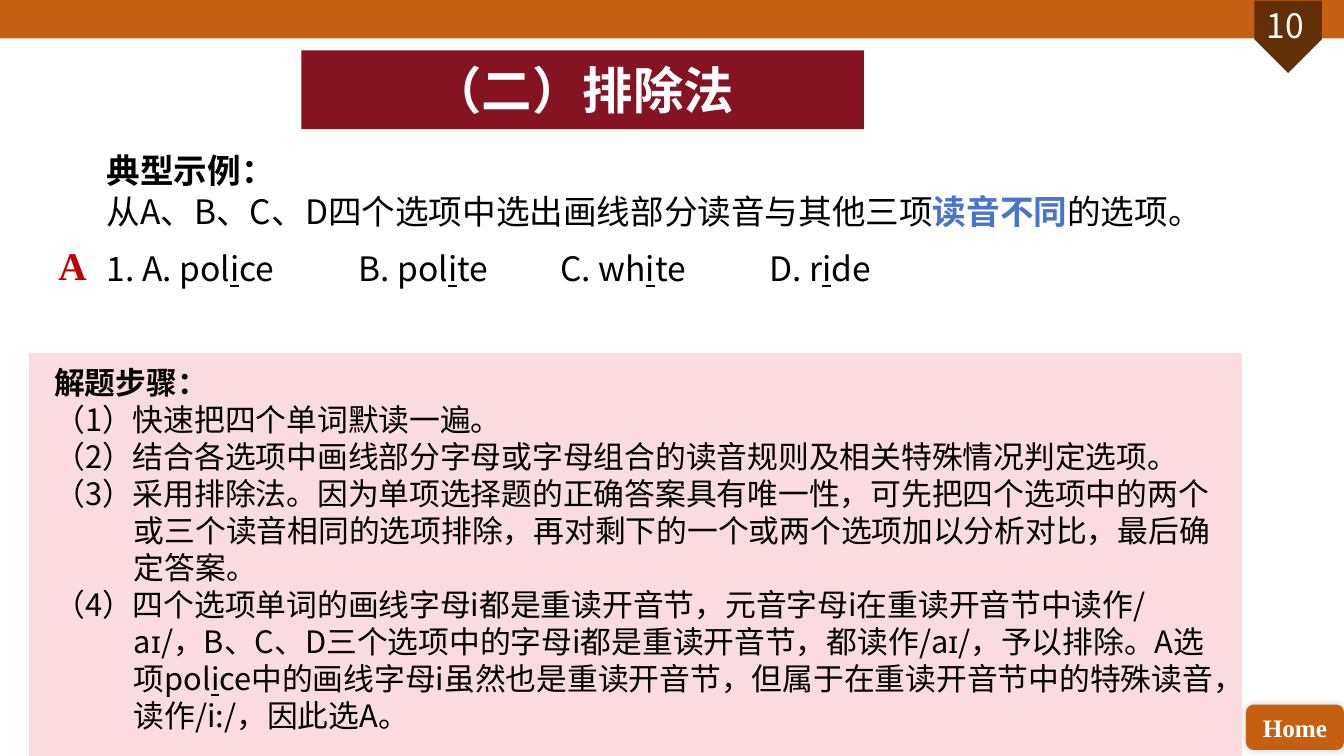
from dataclasses import dataclass

from lxml.etree import SubElement
from pptx import Presentation
from pptx.dml.color import RGBColor
from pptx.enum.shapes import MSO_SHAPE
from pptx.enum.text import MSO_ANCHOR, MSO_AUTO_SIZE, PP_ALIGN
from pptx.oxml.ns import qn
from pptx.util import Pt

ORANGE = RGBColor(0xC6, 0x5F, 0x10)
BROWN = RGBColor(0x63, 0x2F, 0x08)
MAROON = RGBColor(0x85, 0x13, 0x21)
PINK = RGBColor(0xFA, 0xDB, 0xDF)
BLUE = RGBColor(0x48, 0x74, 0xCB)
RED = RGBColor(0xC0, 0x00, 0x00)
BLACK = RGBColor(0, 0, 0)
WHITE = RGBColor(0xFF, 0xFF, 0xFF)
SANS = "Noto Sans CJK SC"
SERIF = "Times New Roman"


@dataclass(frozen=True)
class Box:
    left: float
    top: float
    width: float
    height: float


@dataclass(frozen=True)
class Panel:
    kind: MSO_SHAPE
    box: Box
    fill: RGBColor
    rotation: float = 0


@dataclass(frozen=True)
class Span:
    text: str
    bold: bool = False
    underline: bool = False
    color: RGBColor = BLACK


@dataclass(frozen=True)
class Para:
    spans: tuple
    space_after: float = 0


BAND = Panel(MSO_SHAPE.RECTANGLE, Box(0, 0, 960, 27.4), ORANGE)
PAGE_FLAG = Panel(MSO_SHAPE.PENTAGON, Box(894.2, 2.2, 51.8, 48.2), BROWN, 90)
HOME_BUTTON = Panel(MSO_SHAPE.ROUNDED_RECTANGLE, Box(890, 503.3, 70, 32.4), ORANGE)
STEPS_PANEL = Panel(MSO_SHAPE.RECTANGLE, Box(20.9, 252, 866.2, 288), PINK)
TITLE_BOX = Box(215.3, 36, 401.8, 56.2)

LETTER_I = Span("i", underline=True)
EXAMPLE = (
    Para((Span("典型示例：", bold=True),)),
    Para((
        Span("从A、B、C、D四个选项中选出画线部分读音与其他三项"),
        Span("读音不同", bold=True, color=BLUE),
        Span("的选项。"),
    ), space_after=12),
    Para((
        Span("1. A. pol"), LETTER_I, Span("ce \t\tB. pol"), LETTER_I,
        Span("te \t\tC. wh"), LETTER_I, Span("te\t\t D. r"), LETTER_I, Span("de"),
    )),
)
STEPS = (
    Para((Span("解题步骤：", bold=True),)),
    Para((Span("（1）快速把四个单词默读一遍。"),)),
    Para((Span("（2）结合各选项中画线部分字母或字母组合的读音规则及相关特殊情况判定选项。"),)),
    Para((Span("（3）采用排除法。因为单项选择题的正确答案具有唯一性，可先把四个选项中的两"
               "个或三个读音相同的选项排除，再对剩下的一个或两个选项加以分析对比，最后确定答案。"),)),
    Para((
        Span("（4）四个选项单词的画线字母i都是重读开音节，元音字母i在重读开音节中读作/aɪ/，"
             "B、C、D三个选项中的字母i都是重读开音节，都读作/aɪ/，予以排除。A选项pol"),
        LETTER_I,
        Span("ce中的画线字母i虽然也是重读开音节，但属于在重读开音节中的特殊读音，"
             "读作/i:/，因此选A。"),
    )),
)


def place(shape, box: Box) -> None:
    shape.left, shape.top = Pt(box.left), Pt(box.top)
    shape.width, shape.height = Pt(box.width), Pt(box.height)


def add_panel(page, panel: Panel):
    box = panel.box
    shape = page.shapes.add_shape(
        panel.kind, Pt(box.left), Pt(box.top), Pt(box.width), Pt(box.height))
    shape.shadow.inherit = False
    shape.fill.solid()
    shape.fill.fore_color.rgb = panel.fill
    shape.line.fill.background()
    shape.rotation = panel.rotation
    return shape


def add_text_box(page, box: Box):
    return page.shapes.add_textbox(
        Pt(box.left), Pt(box.top), Pt(box.width), Pt(box.height))


def write_text(shape, paras: tuple, *, size: float, font: str = SANS,
               align: PP_ALIGN = PP_ALIGN.LEFT, anchor: MSO_ANCHOR = MSO_ANCHOR.TOP,
               wrap: bool = True, hanging: float = 0) -> None:
    frame = shape.text_frame
    frame.auto_size = MSO_AUTO_SIZE.NONE
    frame.word_wrap = wrap
    frame.vertical_anchor = anchor
    for index, para in enumerate(paras):
        paragraph = frame.add_paragraph() if index else frame.paragraphs[0]
        paragraph.alignment = align
        paragraph.space_after = Pt(para.space_after)
        if hanging:
            properties = paragraph._p.get_or_add_pPr()
            properties.set("marL", str(Pt(hanging)))
            properties.set("indent", str(-Pt(hanging)))
        for span in para.spans:
            run = paragraph.add_run()
            run.text = span.text
            run.font.name = font
            run.font.size = Pt(size)
            run.font.bold = span.bold
            run.font.underline = span.underline
            run.font.color.rgb = span.color
            SubElement(run._r.get_or_add_rPr(), qn("a:ea"), typeface=SANS)


def add_soft_shadow(shape) -> None:
    effects = shape._element.spPr.find(qn("a:effectLst"))
    shadow = SubElement(effects, qn("a:outerShdw"), blurRad=str(Pt(6)),
                        dist="0", dir="18900000", rotWithShape="0")
    color = SubElement(shadow, qn("a:srgbClr"), val=str(BLACK))
    SubElement(color, qn("a:alpha"), val="20000")


def format_title(title) -> None:
    place(title, TITLE_BOX)
    geometry = SubElement(title._element.spPr, qn("a:prstGeom"), prst="roundRect")
    SubElement(geometry, qn("a:avLst"))
    title.fill.solid()
    title.fill.fore_color.rgb = MAROON
    write_text(title, (Para((Span("（二）排除法", bold=True, color=WHITE),)),), size=36,
               font="Calibri", align=PP_ALIGN.CENTER, anchor=MSO_ANCHOR.MIDDLE)


def main() -> None:
    deck = Presentation()
    deck.slide_width, deck.slide_height = Pt(960), Pt(540)
    page = deck.slides.add_slide(deck.slide_layouts[5])
    format_title(page.shapes.title)

    add_panel(page, BAND)
    add_panel(page, PAGE_FLAG)
    write_text(add_text_box(page, Box(882.7, 0, 70.6, 36)),
               (Para((Span("10", color=WHITE),)),), size=24, align=PP_ALIGN.CENTER)

    home = add_panel(page, HOME_BUTTON)
    add_soft_shadow(home)
    write_text(home, (Para((Span("Home", bold=True, color=WHITE),)),), size=18, font=SERIF,
               align=PP_ALIGN.CENTER, anchor=MSO_ANCHOR.MIDDLE)

    write_text(add_text_box(page, Box(69.1, 103.7, 881.3, 106.6)), EXAMPLE, size=24)
    write_text(add_text_box(page, Box(34.6, 168.5, 34.6, 41)),
               (Para((Span("A", bold=True, color=RED),)),), size=28, font=SERIF, wrap=False)

    add_panel(page, STEPS_PANEL)
    write_text(add_text_box(page, Box(31.7, 256.3, 842.4, 273.6)), STEPS, size=22, hanging=56.9)
    deck.save("out.pptx")


if __name__ == "__main__":
    main()
